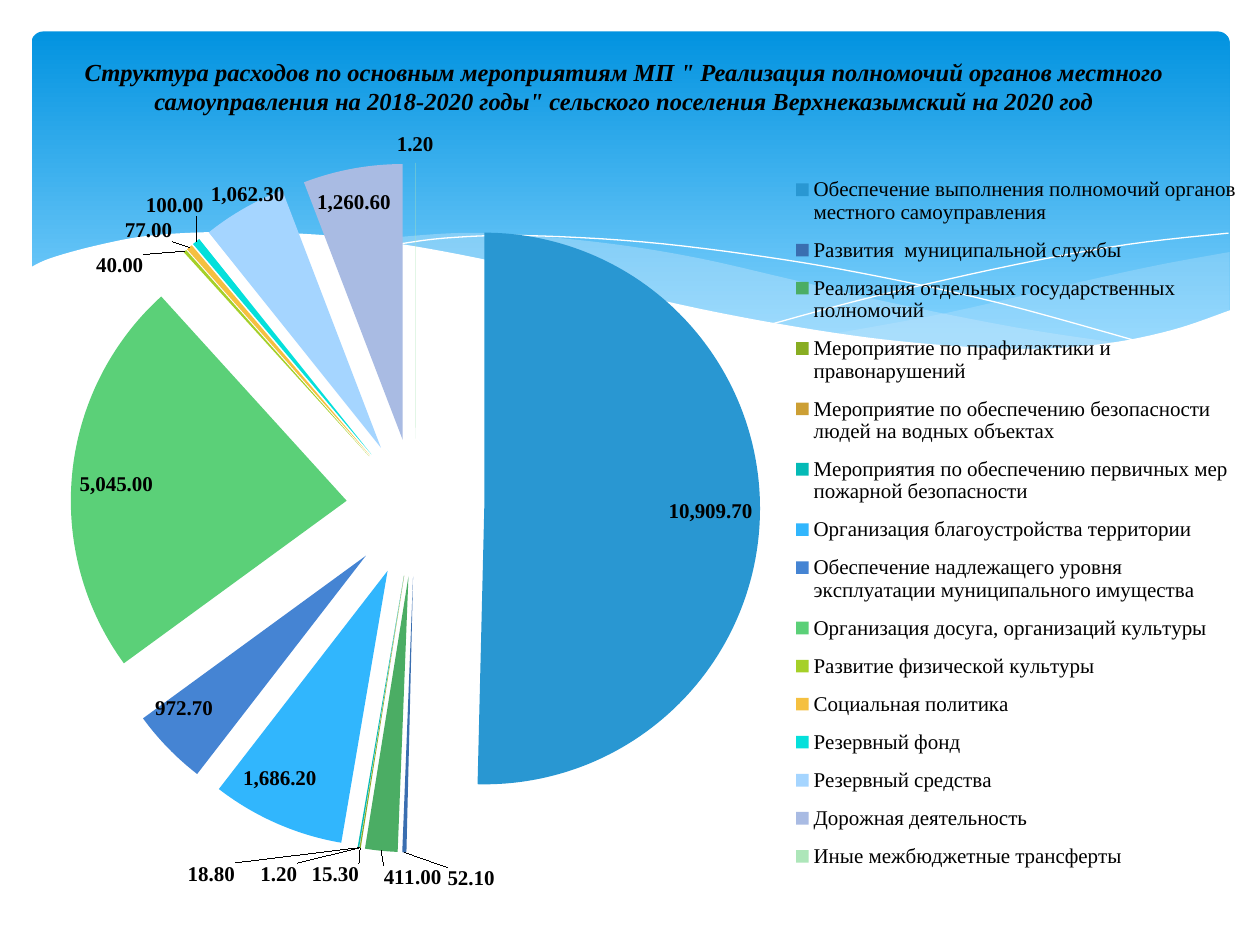
from lxml import etree
from pptx import Presentation
from pptx.chart.data import CategoryChartData
from pptx.dml.color import RGBColor
from pptx.enum.chart import XL_CHART_TYPE as Chart, XL_LABEL_POSITION as LabelPos, XL_LEGEND_POSITION as LegendPos
from pptx.enum.shapes import MSO_SHAPE as Shape
from pptx.enum.text import MSO_ANCHOR as Anchor, PP_ALIGN as Align
from pptx.oxml.ns import qn
from pptx.util import Inches, Pt

BLACK = RGBColor(0x00, 0x00, 0x00)
WHITE = RGBColor(0xFF, 0xFF, 0xFF)
SKY_TOP = RGBColor(0x02, 0x93, 0xE0)
SKY_END = RGBColor(0x83, 0xD3, 0xFE)
MIST = RGBColor(0xC6, 0xE7, 0xFC)
SLICE_COLORS = [RGBColor.from_string(c) for c in (
    "2997D2 3A6EB0 4BAD64 88AD22 CC9F34 04BAB6 31B6FD 4584D3 "
    "5BD078 A5D028 F5C040 05E0DB A5D5FF A9BBE3 ADE6B9").split()]
SERIF = "Times New Roman"
TITLE = ('Структура расходов по основным мероприятиям МП " Реализация полномочий '
         'органов местного самоуправления на 2018-2020 годы" сельского поселения '
         'Верхнеказымский на 2020 год')

IN, OUT = LabelPos.INSIDE_END, LabelPos.OUTSIDE_END
# category, value, label position, label shift as a share of the chart
SLICES = [
    ("Обеспечение выполнения полномочий органов местного самоуправления", 10909.7, IN, (0, 0)),
    ("Развития  муниципальной службы", 52.1, OUT, (0.055, 0.01)),
    ("Реализация отдельных государственных полномочий", 411, OUT, (0.05, 0.01)),
    ("Мероприятие по прафилактики и правонарушений", 15.3, OUT, (0, 0.01)),
    ("Мероприятие по обеспечению безопасности людей на водных объектах", 1.2, OUT, (-0.05, 0.01)),
    ("Мероприятия по обеспечению первичных мер пожарной безопасности", 18.8, OUT, (-0.1, 0.01)),
    ("Организация благоустройства территории", 1686.2, IN, (-0.03, -0.035)),
    ("Обеспечение надлежащего уровня эксплуатации муниципального имущества", 972.7, IN, (-0.015, -0.03)),
    ("Организация досуга, организаций культуры", 5045, IN, (0, 0)),
    ("Развитие физической культуры", 40, OUT, (-0.03, 0.04)),
    ("Социальная политика", 77, OUT, (-0.01, 0)),
    ("Резервный фонд", 100, OUT, (0.01, -0.025)),
    ("Резервный средства", 1062.3, IN, (-0.03, -0.04)),
    ("Дорожная деятельность", 1260.6, IN, (-0.03, 0.02)),
    ("Иные межбюджетные трансферты", 1.2, OUT, (0, 0)),
]

BACK_WAVE = [(9.76, 2), (9.21, 2.1), (8.61, 2.23), (7.53, 2.48), (6.61, 2.65)]
BACK_WAVE_END = [(6.61, 2.65), (7.19, 2.72), (8.03, 2.78), (8.81, 2.73), (9.35, 2.62), (9.76, 2.47)]
MID_WAVE = [(8.93, 2.73), (8.07, 2.6), (7.06, 2.4), (6.29, 2.22), (5.55, 2.05),
            (4.89, 1.94), (4.2, 1.87), (3.61, 1.85), (2.86, 1.91)]
MID_WAVE_END = [(2.86, 1.91), (3.62, 2.03), (4.49, 2.22), (5.66, 2.48), (6.5, 2.64),
                (7.22, 2.74), (8.07, 2.78), (8.93, 2.73)]
LONG_LINE = [(3.09, 1.95), (3.53, 1.89), (4.16, 1.87), (5.1, 1.92), (6.08, 2.04),
             (6.95, 2.19), (7.95, 2.41), (9.07, 2.72)]
SHORT_LINE = [(6.13, 2.57), (6.95, 2.35), (8.06, 2.1), (8.95, 1.94), (9.75, 1.85)]
WHITE_WAVE = [(9.77, 2.46), (9.3, 2.62), (8.75, 2.73), (8.09, 2.77), (7.26, 2.72),
              (6.48, 2.62), (5.55, 2.45), (4.47, 2.2), (3.65, 2.02), (2.92, 1.9),
              (2.3, 1.85), (1.77, 1.84), (1.19, 1.87), (0.76, 1.95), (0.4, 2.05), (0.23, 2.13)]


def smooth(knots, steps=6):
    pts = [knots[0], *knots, knots[-1]]
    curve = []
    for a, b, c, d in zip(pts, pts[1:], pts[2:], pts[3:]):
        for i in range(steps):
            t = i / steps
            curve.append(tuple(
                0.5 * (2 * q + (r - p) * t + (2 * p - 5 * q + 4 * r - s) * t ** 2
                       + (3 * q - p - 3 * r + s) * t ** 3)
                for p, q, r, s in zip(a, b, c, d)))
    return curve + [knots[-1]]


def add_curve(s, points, fill=None, opacity=None):
    pts = [(Inches(x), Inches(y)) for x, y in points]
    builder = s.shapes.build_freeform(*pts[0])
    builder.add_line_segments(pts[1:], close=fill is not None)
    sp = builder.convert_to_shape()
    sp.shadow.inherit = False
    if fill is None:
        sp.fill.background()
        sp.line.color.rgb = WHITE
        sp.line.width = Pt(0)
        return
    sp.line.fill.background()
    sp.fill.solid()
    sp.fill.fore_color.rgb = fill
    if opacity:
        color = sp._element.spPr.find(qn("a:solidFill"))[0]
        etree.SubElement(color, qn("a:alpha"), val=str(opacity * 1000))


def add_sky(s, x, y, w, h):
    sp = s.shapes.add_shape(Shape.ROUNDED_RECTANGLE, x, y, w, h)
    sp.adjustments[0] = 0.034
    sp.shadow.inherit = False
    sp.line.fill.background()
    sp.fill.gradient()
    sp.fill.gradient_angle = 270
    for stop, color, pos in zip(sp.fill.gradient_stops, (SKY_TOP, SKY_END), (0, 0.9)):
        stop.color.rgb = color
        stop.position = pos
    add_curve(s, smooth(BACK_WAVE) + smooth(BACK_WAVE_END), MIST, 29)
    add_curve(s, smooth(MID_WAVE) + smooth(MID_WAVE_END), MIST, 40)
    add_curve(s, smooth(LONG_LINE))
    add_curve(s, smooth(SHORT_LINE))
    add_curve(s, smooth(WHITE_WAVE) + [(0.23, 3.29), (9.77, 3.29)], WHITE)


def format_font(font, size, bold=False, italic=False, name=SERIF, color=BLACK):
    font.size, font.bold, font.italic, font.name = Pt(size), bold, italic, name
    font.color.rgb = color


def write(tf, text, align=Align.CENTER, anchor=Anchor.MIDDLE, **fmt):
    tf.word_wrap = True
    tf.vertical_anchor = anchor
    p = tf.paragraphs[0]
    p.alignment = align
    r = p.add_run()
    r.text = text
    format_font(r.font, **fmt)


def add_title(s, x, y, w, h):
    sp = s.shapes.title
    sp.left, sp.top, sp.width, sp.height = x, y, w, h
    s.shapes._spTree.append(sp._element)
    write(sp.text_frame, TITLE, size=14, bold=True, italic=True)


def make_layout(inner=False, **values):
    layout = etree.Element(qn("c:layout"))
    manual = etree.SubElement(layout, qn("c:manualLayout"))
    if inner:
        etree.SubElement(manual, qn("c:layoutTarget"), val="inner")
    if "w" in values:
        for mode in ("xMode", "yMode"):
            etree.SubElement(manual, qn(f"c:{mode}"), val="edge")
    for key, value in values.items():
        etree.SubElement(manual, qn(f"c:{key}"), val=str(value))
    return layout


def add_pie(s, x, y, w, h):
    data = CategoryChartData(number_format="#,##0.00")
    data.categories = [row[0] for row in SLICES]
    data.add_series("Series 1", [row[1] for row in SLICES])
    chart = s.shapes.add_chart(Chart.PIE, x, y, w, h, data).chart
    chart.has_title = False
    format_font(chart.font, 10, name="Calibri")

    chart.has_legend = True
    legend = chart.legend
    legend.position = LegendPos.RIGHT
    legend.include_in_layout = False
    format_font(legend.font, 12)
    for old in legend._element.findall(qn("c:layout")):
        legend._element.remove(old)
    legend._element.find(qn("c:legendPos")).addnext(
        make_layout(x=0.63, y=0.06, w=0.37, h=0.92))

    area = chart._chartSpace.chart.plotArea
    for old in area.findall(qn("c:layout")):
        area.remove(old)
    area.insert(0, make_layout(inner=True, x=0.037, y=0.06, w=0.565, h=0.88))

    plot = chart.plots[0]
    plot.vary_by_categories = True
    series = plot.series[0]
    labels = series.data_labels
    labels.show_value = True
    labels.number_format = "#,##0.00"
    labels.number_format_is_linked = False
    format_font(labels.font, 12, bold=True)
    for i, (color, (_, _, position, (dx, dy))) in enumerate(zip(SLICE_COLORS, SLICES)):
        point = series.points[i]
        point.format.fill.solid()
        point.format.fill.fore_color.rgb = color
        label = point.data_label
        format_font(label.font, 12, bold=True)
        label.position = position
        if dx or dy:
            labels._element.findall(qn("c:dLbl"))[i].insert(1, make_layout(x=dx, y=dy))
    explosion = etree.Element(qn("c:explosion"), val="25")
    series._element.find(qn("c:dPt")).addprevious(explosion)


def main():
    prs = Presentation()
    prs.slide_width, prs.slide_height = Inches(10), Inches(7.5)
    s = prs.slides.add_slide(prs.slide_layouts[5])
    add_sky(s, Inches(0.25), Inches(0.25), Inches(9.51), Inches(2.7))
    add_title(s, Inches(0.5), Inches(0.29), Inches(8.91), Inches(0.79))
    add_pie(s, Inches(0.2), Inches(0.92), Inches(9.69), Inches(6.22))
    prs.save("out.pptx")


if __name__ == "__main__":
    main()
